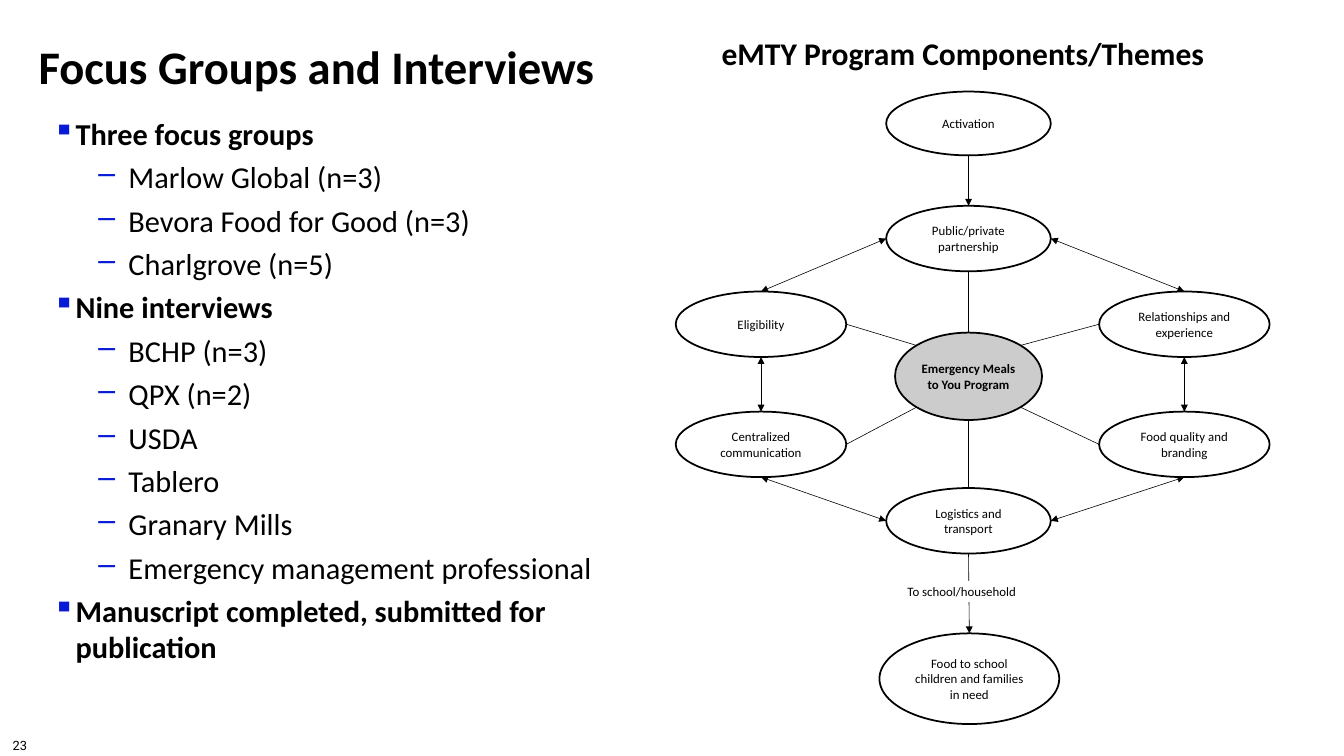
import math

import pptx
import pptx.dml.color
import pptx.enum.shapes
import pptx.enum.text
import pptx.oxml.ns
import pptx.util
from lxml import etree
from pptx.util import Inches

BLACK = pptx.dml.color.RGBColor(0x00, 0x00, 0x00)
WHITE = pptx.dml.color.RGBColor(0xFF, 0xFF, 0xFF)
GREY = pptx.dml.color.RGBColor(0xCC, 0xCC, 0xCC)
BLUE = pptx.dml.color.RGBColor(0x07, 0x1A, 0xD7)

CENTER = pptx.enum.text.PP_ALIGN.CENTER
MIDDLE = pptx.enum.text.MSO_ANCHOR.MIDDLE

# Connection sites of an ellipse, counted anticlockwise from the top
TOP, TOP_LEFT, LEFT, BOTTOM_LEFT, BOTTOM, BOTTOM_RIGHT, RIGHT, TOP_RIGHT = range(8)

OUTLINE = [
    ("Three focus groups",
     ["Marlow Global (n=3)", "Bevora Food for Good (n=3)", "Charlgrove (n=5)"]),
    ("Nine interviews",
     ["BCHP (n=3)", "QPX (n=2)", "USDA", "Tablero", "Granary Mills",
      "Emergency management professional"]),
    ("Manuscript completed, submitted for publication", []),
]

# Name: text, centre x, centre y, width, height (inches within the diagram)
NODES = {
    "activation": ("Activation", 3.49, 0.38, 1.96, 0.76),
    "partnership": ("Public/private partnership", 3.49, 1.75, 1.96, 0.78),
    "relationships": ("Relationships and experience", 6.06, 2.77, 2.03, 0.78),
    "program": ("Emergency Meals to You Program", 3.49, 3.39, 1.75, 1.04),
    "eligibility": ("Eligibility", 1.02, 2.77, 2.03, 0.78),
    "communication": ("Centralized communication", 1.02, 4.2, 2.03, 0.78),
    "logistics": ("Logistics and transport", 3.49, 5.11, 1.96, 0.78),
    "quality": ("Food quality and branding", 6.06, 4.2, 2.03, 0.78),
    "families": ("Food to school children and families in need", 3.5, 6.99, 2.14, 1.08),
}

# Start node and site, end node and site, ends with arrowheads
LINKS = [
    ("activation", BOTTOM, "partnership", TOP, ["tailEnd"]),
    ("logistics", BOTTOM, "families", TOP, ["tailEnd"]),
    ("partnership", LEFT, "eligibility", TOP, ["headEnd", "tailEnd"]),
    ("eligibility", BOTTOM, "communication", TOP, ["headEnd", "tailEnd"]),
    ("communication", BOTTOM, "logistics", LEFT, ["headEnd", "tailEnd"]),
    ("partnership", RIGHT, "relationships", TOP, ["headEnd", "tailEnd"]),
    ("relationships", BOTTOM, "quality", TOP, ["headEnd", "tailEnd"]),
    ("quality", BOTTOM, "logistics", RIGHT, ["headEnd", "tailEnd"]),
    ("eligibility", RIGHT, "program", TOP_LEFT, []),
    ("partnership", BOTTOM, "program", TOP, []),
    ("program", TOP_RIGHT, "relationships", LEFT, []),
    ("quality", LEFT, "program", BOTTOM_RIGHT, []),
    ("program", BOTTOM, "logistics", TOP, []),
    ("communication", RIGHT, "program", BOTTOM_LEFT, []),
]


def add_child(parent, tag, **attributes):
    return etree.SubElement(parent, pptx.oxml.ns.qn(tag), **attributes)


def set_font(para, size, bold=False, name="Calibri"):
    para.font.name = name
    para.font.size = pptx.util.Pt(size)
    para.font.bold = bold
    para.font.color.rgb = BLACK


def set_margins(frame, margin):
    frame.margin_left = frame.margin_right = Inches(margin)
    frame.margin_top = frame.margin_bottom = Inches(margin)


def add_text_box(page, left, top, width, height, margin=0.05, wrap=True):
    box = page.shapes.add_textbox(Inches(left), Inches(top), Inches(width), Inches(height))
    frame = box.text_frame
    frame.word_wrap = wrap
    set_margins(frame, margin)
    return frame


def add_line_of_text(page, text, box, size, bold=True, spacing=1.0, margin=0.0,
                     name="Calibri", wrap=True):
    para = add_text_box(page, *box, margin, wrap).paragraphs[0]
    para.text = text
    para.line_spacing = spacing
    set_font(para, size, bold, name)


def add_bullet(para, mark, indent, hanging):
    properties = para._p.get_or_add_pPr()
    properties.set("marL", str(Inches(indent)))
    properties.set("indent", str(-Inches(hanging)))
    color = add_child(properties, "a:buClr")
    add_child(color, "a:srgbClr", val=str(BLUE))
    add_child(properties, "a:buChar", char=mark)


def add_outline(page, left, top, width, height):
    frame = add_text_box(page, left, top, width, height)
    entries = [entry for heading, items in OUTLINE
               for entry in [(heading, 0)] + [(item, 1) for item in items]]
    for index, (text, level) in enumerate(entries):
        para = frame.add_paragraph() if index else frame.paragraphs[0]
        para.text = text
        para.level = level
        para.space_before = pptx.util.Pt(6)
        set_font(para, 26, bold=level == 0)
        add_bullet(para, *(("–", 0.9, 0.36) if level else ("▪", 0.27, 0.27)))


def add_filled_shape(page, kind, text, center_x, center_y, width, height, fill, bold=False):
    shape = page.shapes.add_shape(
        kind, Inches(center_x - width / 2), Inches(center_y - height / 2),
        Inches(width), Inches(height))
    shape.shadow.inherit = False
    shape.fill.solid()
    shape.fill.fore_color.rgb = fill
    frame = shape.text_frame
    frame.word_wrap = True
    frame.vertical_anchor = MIDDLE
    set_margins(frame, 0.05)
    para = frame.paragraphs[0]
    para.text = text
    para.alignment = CENTER
    set_font(para, 11, bold)
    return shape


def site_point(ellipse, site):
    angle = site * math.pi / 4
    x = ellipse.left + ellipse.width / 2 * (1 - math.sin(angle))
    y = ellipse.top + ellipse.height / 2 * (1 - math.cos(angle))
    return round(x), round(y)


def add_link(page, start, start_site, end, end_site, arrow_ends):
    link = page.shapes.add_connector(
        pptx.enum.shapes.MSO_CONNECTOR.STRAIGHT,
        *site_point(start, start_site), *site_point(end, end_site))
    link.line.color.rgb = BLACK
    link.line.width = pptx.util.Pt(0.5)
    for arrow_end in arrow_ends:
        add_child(link.line._get_or_add_ln(), "a:" + arrow_end, type="triangle")
    add_child(link._element.spPr, "a:effectLst")
    # Ellipses have eight sites, so the joins are written directly
    joins = link._element.nvCxnSpPr.cNvCxnSpPr
    add_child(joins, "a:stCxn", id=str(start.shape_id), idx=str(start_site))
    add_child(joins, "a:endCxn", id=str(end.shape_id), idx=str(end_site))


def add_diagram(page, left, top):
    shapes = pptx.enum.shapes.MSO_SHAPE
    ellipses = {}
    for name, (text, x, y, width, height) in NODES.items():
        is_hub = name == "program"
        ellipse = add_filled_shape(page, shapes.OVAL, text, left + x, top + y, width, height,
                                   GREY if is_hub else WHITE, is_hub)
        ellipse.line.color.rgb = BLACK
        ellipse.line.width = pptx.util.Pt(1.5)
        ellipses[name] = ellipse
    for start, start_site, end, end_site, arrow_ends in LINKS:
        add_link(page, ellipses[start], start_site, ellipses[end], end_site, arrow_ends)
    # Label over the last arrow
    label = add_filled_shape(page, shapes.RECTANGLE, "To school/household",
                             left + 3.41, top + 5.95, 1.86, 0.25, WHITE)
    label.line.fill.background()


def main():
    deck = pptx.Presentation()
    deck.slide_width, deck.slide_height = Inches(16), Inches(9)
    page = deck.slides.add_slide(deck.slide_layouts[6])

    # Page number and title
    add_line_of_text(page, "23", (0.15, 8.78, 0.18, 0.16), 11, bold=False,
                     name="Roboto", wrap=False)
    add_line_of_text(page, "Focus Groups and Interviews", (0.46, 0.52, 13.36, 0.78), 40,
                     spacing=0.9)
    # Left: groups and interviews
    add_outline(page, 0.58, 1.32, 6.86, 6.9)
    # Right: program components
    add_diagram(page, 8.04, 1.09)
    add_line_of_text(page, "eMTY Program Components/Themes", (8.54, 0.13, 6.31, 0.48), 27,
                     spacing=1.5, margin=0.05)
    deck.save("out.pptx")


if __name__ == "__main__":
    main()
